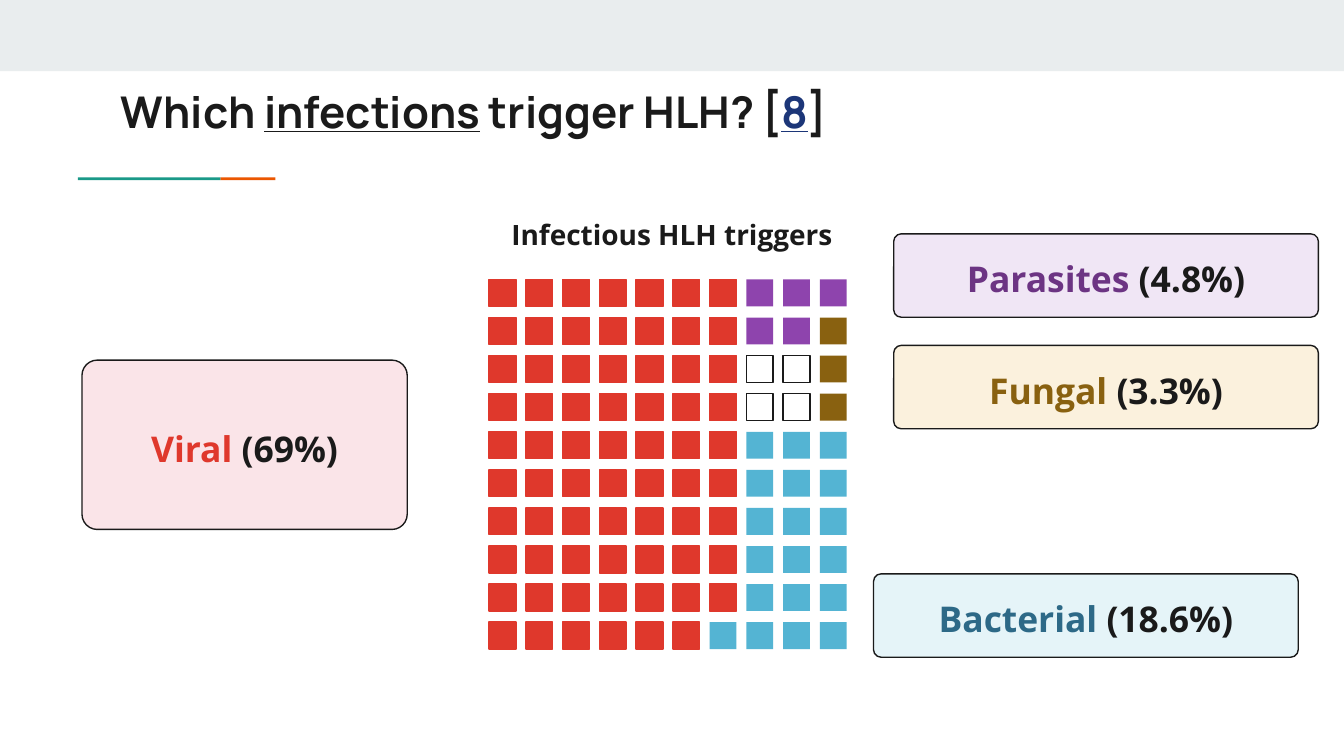
from pptx import Presentation
from pptx.dml.color import RGBColor
from pptx.enum import shapes, text
from pptx.util import Inches, Pt

# Content
TITLE = [("Which ", "ink", False), ("infections", "ink", True),
         (" trigger HLH? [", "ink", False), ("8", "link", True), ("]", "ink", False)]
GRID_HEADING = "Infectious HLH triggers"

# One letter per percent: Viral, Parasites, Fungal, Bacterial, Other
WAFFLE = ["VVVVVVVPPP",
          "VVVVVVVPPF",
          "VVVVVVVOOF",
          "VVVVVVVOOF",
          *["VVVVVVVBBB"] * 5,
          "VVVVVVBBBB"]

# name, share, name colour, card fill, (left, top, width, height)
CARDS = [
    ("Viral", "69%", "viral", "viral_pale", (0.61, 2.68, 2.42, 1.26)),
    ("Bacterial", "18.6%", "bacterial_dark", "bacterial_pale", (6.5, 4.27, 3.16, 0.62)),
    ("Parasites", "4.8%", "parasites_dark", "parasites_pale", (6.65, 1.74, 3.16, 0.62)),
    ("Fungal", "3.3%", "fungal", "fungal_pale", (6.65, 2.57, 3.16, 0.62)),
]

THEME = {
    "colors": {
        "ink": "1A1A1A", "link": "1C3678", "white": "FFFFFF",
        "band": "E9EDEE", "teal": "1A9988", "orange": "EB5600",
        "viral": "DF382C", "viral_pale": "FAE4E8",
        "parasites": "8E44AD", "parasites_dark": "6C3483", "parasites_pale": "F0E6F5",
        "fungal": "896110", "fungal_pale": "FBF1DD",
        "bacterial": "54B4D3", "bacterial_dark": "2D6987", "bacterial_pale": "E5F4F8",
    },
    "title": ("Manrope", 23.4), "card": ("Open Sans", 19), "heading": ("Open Sans", 15),
    "line": 0.75,
}

# Fill and outline of each kind of square
SQUARES = {"V": ("viral", "viral"), "P": ("parasites", None), "F": ("fungal", None),
           "B": ("bacterial", None), "O": ("white", "ink")}
SLIDE_WIDTH = 10
GRID_LEFT, GRID_TOP, SQUARE = 3.64, 2.08, 0.2
COLUMN_STEP, ROW_STEP = 2.46 / 9, 2.55 / 9


def color(name):
    return RGBColor.from_string(THEME["colors"][name])


def add_box(slide, kind, place, fill, outline=None):
    box = slide.shapes.add_shape(kind, *map(Inches, place))
    box.shadow.inherit = False
    box.fill.solid()
    box.fill.fore_color.rgb = color(fill)
    if outline:
        box.line.color.rgb = color(outline)
        box.line.width = Pt(THEME["line"])
    else:
        box.line.fill.background()
    return box


def write(shape, runs, style, align, anchor):
    frame = shape.text_frame
    frame.word_wrap = True
    frame.auto_size = text.MSO_AUTO_SIZE.NONE
    frame.vertical_anchor = anchor
    frame.margin_left = frame.margin_right = Inches(0.1)
    frame.margin_top = frame.margin_bottom = Inches(0.1)
    line = frame.paragraphs[0]
    line.alignment = align
    family, size = THEME[style]
    line.font.name, line.font.size, line.font.bold = family, Pt(size), True
    for words, tint, underlined in runs:
        run = line.add_run()
        run.text = words
        run.font.color.rgb = color(tint)
        if underlined:
            run.font.underline = True
    return line


def main():
    deck = Presentation()
    deck.slide_width = Inches(SLIDE_WIDTH)
    deck.slide_height = Inches(SLIDE_WIDTH * 9 / 16)
    slide = deck.slides.add_slide(deck.slide_layouts[5])
    rect = shapes.MSO_SHAPE.RECTANGLE
    center, middle = text.PP_ALIGN.CENTER, text.MSO_ANCHOR.MIDDLE

    # Top band and two-colour accent rule
    add_box(slide, rect, (0, 0, SLIDE_WIDTH, 0.53), "band")
    add_box(slide, rect, (1.64, 1.32, 0.41, 0.02), "orange")
    add_box(slide, rect, (0.58, 1.32, 1.06, 0.02), "teal")

    # Title
    title = slide.shapes.title
    title.left, title.top = Inches(0.8), Inches(0.53)
    title.width, title.height = Inches(8.41), Inches(0.59)
    write(title, TITLE, "title", text.PP_ALIGN.LEFT, middle)

    # Grid of one hundred squares
    for row, letters in enumerate(WAFFLE):
        for column, letter in enumerate(letters):
            place = (GRID_LEFT + column * COLUMN_STEP, GRID_TOP + row * ROW_STEP,
                     SQUARE, SQUARE)
            add_box(slide, rect, place, *SQUARES[letter])

    # Label cards
    for name, share, tint, fill, place in CARDS:
        card = add_box(slide, shapes.MSO_SHAPE.ROUNDED_RECTANGLE, place, fill, "ink")
        card.adjustments[0] = 0.09
        runs = [(f"{name} ", tint, False), (f"({share})", "ink", False)]
        write(card, runs, "card", center, middle).line_spacing = 1.15

    # Grid heading
    heading = slide.shapes.add_textbox(*map(Inches, (3.5, 1.52, 3, 0.45)))
    write(heading, [(GRID_HEADING, "ink", False)], "heading", center, text.MSO_ANCHOR.TOP)

    deck.save("out.pptx")


if __name__ == "__main__":
    main()
